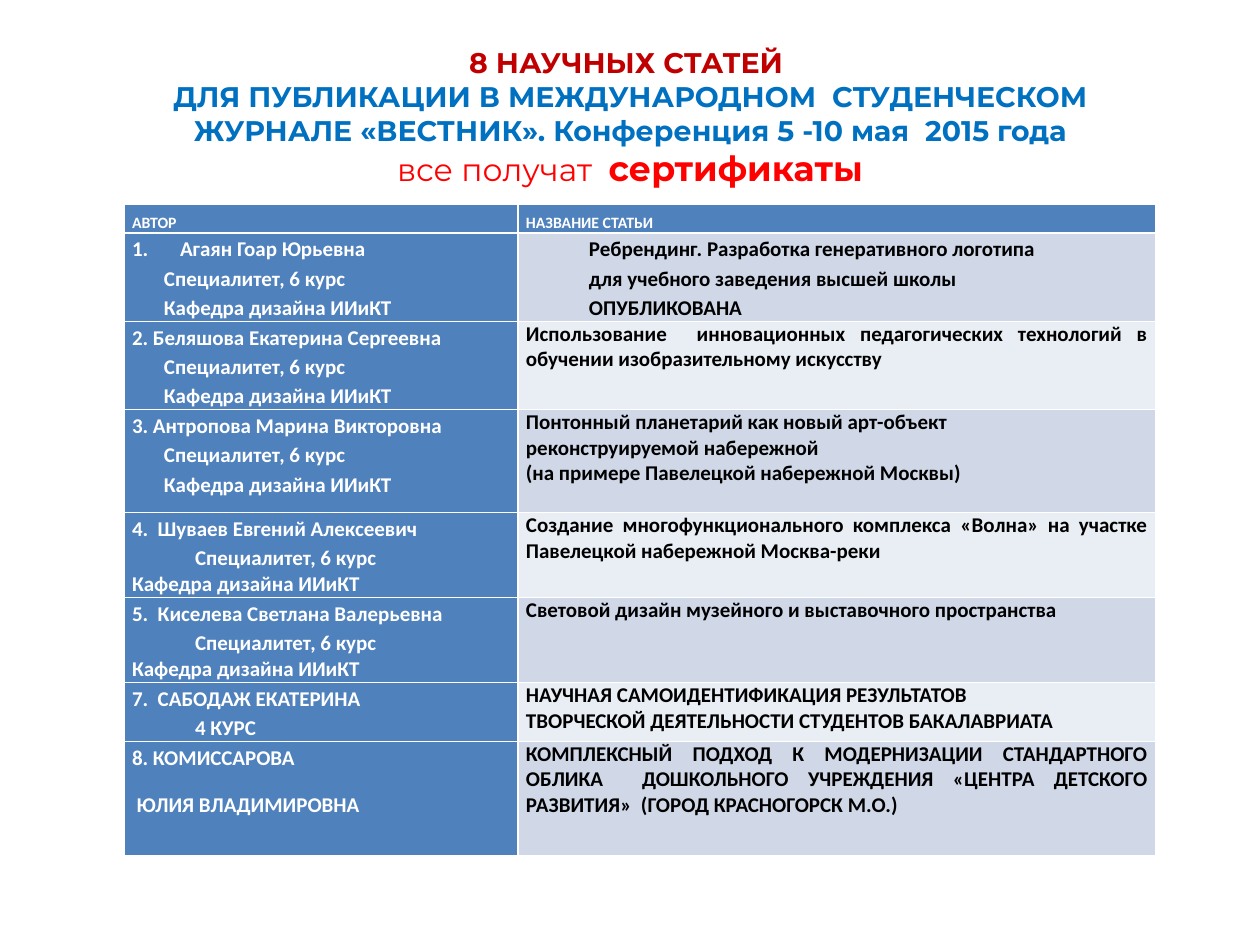
"""Build a slide listing student articles accepted for a journal."""
import dataclasses
import lxml.etree
import pptx
import pptx.dml.color
import pptx.enum.text
import pptx.oxml.ns
import pptx.util


@dataclasses.dataclass(frozen=True)
class Theme:
    heading_font: str = "Montserrat"
    table_font: str = "Calibri"
    dark_red: str = "C00000"
    blue: str = "0070C0"
    red: str = "FF0000"
    white: str = "FFFFFF"
    black: str = "000000"
    author_fill: str = "4F81BD"
    bands: tuple = ("D0D8E8", "E9EDF4")
    title_size: float = 16.2
    promise_size: float = 18
    certificate_size: float = 19.8
    header_size: float = 9
    body_size: float = 12


theme = Theme()
PX = 914400 / 126


def px(count):
    return pptx.util.Emu(round(count * PX))


def fill_cell(cell, fill, color, size, lines):
    """Write lines of (text, indent, line spacing) into a filled cell."""
    cell.fill.solid()
    cell.fill.fore_color.rgb = pptx.dml.color.RGBColor.from_string(fill)
    cell.margin_left = cell.margin_right = px(8)
    cell.margin_top = cell.margin_bottom = 0
    frame = cell.text_frame
    for index, (text, indent, spacing) in enumerate(lines):
        para = frame.add_paragraph() if index else frame.paragraphs[0]
        para.text = text
        para.alignment = pptx.enum.text.PP_ALIGN.JUSTIFY
        para.line_spacing = spacing
        para.font.name = theme.table_font
        para.font.size = pptx.util.Pt(size)
        para.font.bold = True
        para.font.color.rgb = pptx.dml.color.RGBColor.from_string(color)
        if indent:
            para._p.get_or_add_pPr().set("marL", str(px(indent)))


deck = pptx.Presentation()
deck.slide_width, deck.slide_height = px(1260), px(945)
page = deck.slides.add_slide(deck.slide_layouts[5])

title = page.shapes.title
title.left, title.top, title.width, title.height = px(63), px(38), px(1134), px(158)
title.text_frame.auto_size = pptx.enum.text.MSO_AUTO_SIZE.NONE
title.text_frame.vertical_anchor = pptx.enum.text.MSO_ANCHOR.MIDDLE
para = title.text_frame.paragraphs[0]
para.alignment = pptx.enum.text.PP_ALIGN.CENTER
para.font.name = theme.heading_font
para.font.size = pptx.util.Pt(theme.title_size)
title_spans = [
    ("8 НАУЧНЫХ СТАТЕЙ ", theme.dark_red, theme.title_size, True, True),
    ("ДЛЯ ПУБЛИКАЦИИ В МЕЖДУНАРОДНОМ  СТУДЕНЧЕСКОМ", theme.blue, theme.title_size, True, True),
    ("ЖУРНАЛЕ «ВЕСТНИК». Конференция 5 -10 мая  2015 года", theme.blue, theme.title_size, True, True),
    ("все получат  ", theme.red, theme.promise_size, False, False),
    ("сертификаты", theme.red, theme.certificate_size, True, False),
]
for text, color, size, bold, breaks in title_spans:
    span = para.add_run()
    span.text = text
    span.font.size = pptx.util.Pt(size)
    span.font.bold = bold
    span.font.color.rgb = pptx.dml.color.RGBColor.from_string(color)
    if breaks:
        para.add_line_break()

COURSE, CHAIR = "Специалитет, 6 курс", "Кафедра дизайна ИИиКТ"
NEAR, FAR = 32, 63
WIDE = 1.15
# Each article: row height, author lines, title lines.
articles = [
    (88, [("Агаян Гоар Юрьевна", 0, WIDE), (COURSE, NEAR, WIDE), (CHAIR, NEAR, WIDE)],
     [("Ребрендинг. Разработка генеративного логотипа", FAR, WIDE),
      ("для учебного заведения высшей школы", FAR, WIDE),
      ("ОПУБЛИКОВАНА", FAR, WIDE)]),
    (88, [("2. Беляшова Екатерина Сергеевна", 0, WIDE), (COURSE, NEAR, WIDE), (CHAIR, NEAR, WIDE)],
     [("Использование  инновационных педагогических технологий в "
       "обучении изобразительному искусству", 0, 1.0)]),
    (103, [("3. Антропова Марина Викторовна", 0, WIDE), (COURSE, NEAR, WIDE), (CHAIR, NEAR, WIDE)],
     [("Понтонный планетарий как новый арт-объект", 0, 1.0),
      ("реконструируемой набережной", 0, 1.0),
      ("(на примере Павелецкой набережной Москвы)", 0, 1.0)]),
    (85, [("4.  Шуваев Евгений Алексеевич", 0, WIDE), (COURSE, FAR, WIDE), (CHAIR, 0, 1.0)],
     [("Создание многофункционального комплекса «Волна» на участке "
       "Павелецкой набережной Москва-реки", 0, 1.0)]),
    (85, [("5.  Киселева Светлана Валерьевна", 0, WIDE), (COURSE, FAR, WIDE), (CHAIR, 0, 1.0)],
     [("Световой дизайн музейного и выставочного пространства", 0, 1.0)]),
    (58, [("7.  САБОДАЖ ЕКАТЕРИНА", 0, WIDE), ("4 КУРС", FAR, WIDE)],
     [("НАУЧНАЯ САМОИДЕНТИФИКАЦИЯ РЕЗУЛЬТАТОВ", 0, 1.0),
      ("ТВОРЧЕСКОЙ ДЕЯТЕЛЬНОСТИ СТУДЕНТОВ БАКАЛАВРИАТА", 0, 1.0)]),
    (114, [("8. КОМИССАРОВА", 0, WIDE), (" ЮЛИЯ ВЛАДИМИРОВНА", 0, WIDE)],
     [("КОМПЛЕКСНЫЙ ПОДХОД К МОДЕРНИЗАЦИИ СТАНДАРТНОГО ОБЛИКА  ДОШКОЛЬНОГО "
       "УЧРЕЖДЕНИЯ «ЦЕНТРА ДЕТСКОГО РАЗВИТИЯ»  (ГОРОД КРАСНОГОРСК М.О.)", 0, 1.0)]),
]

header_height = 29
table_height = header_height + sum(height for height, _, _ in articles)
table = page.shapes.add_table(
    len(articles) + 1, 2, px(124), px(204), px(1032), px(table_height)).table
table.first_col = True
for column, width in zip(table.columns, (394, 638)):
    column.width = px(width)

table.rows[0].height = px(header_height)
for column, text in enumerate(("АВТОР", "НАЗВАНИЕ СТАТЬИ")):
    fill_cell(table.cell(0, column), theme.author_fill, theme.white,
              theme.header_size, [(text, 0, 1.5)])

for row, (height, author, article) in enumerate(articles, start=1):
    table.rows[row].height = px(height)
    fill_cell(table.cell(row, 0), theme.author_fill, theme.white, theme.body_size, author)
    fill_cell(table.cell(row, 1), theme.bands[(row - 1) % 2], theme.black,
              theme.body_size, article)

first_author = table.cell(1, 0).text_frame.paragraphs[0]._p.get_or_add_pPr()
first_author.set("marL", str(px(48)))
first_author.set("indent", str(-px(48)))
number = lxml.etree.Element(pptx.oxml.ns.qn("a:buAutoNum"), type="arabicPeriod")
first_author.find(pptx.oxml.ns.qn("a:defRPr")).addprevious(number)

for para in table.cell(len(articles), 0).text_frame.paragraphs:
    para.space_after = pptx.util.Pt(10)

deck.save("out.pptx")
